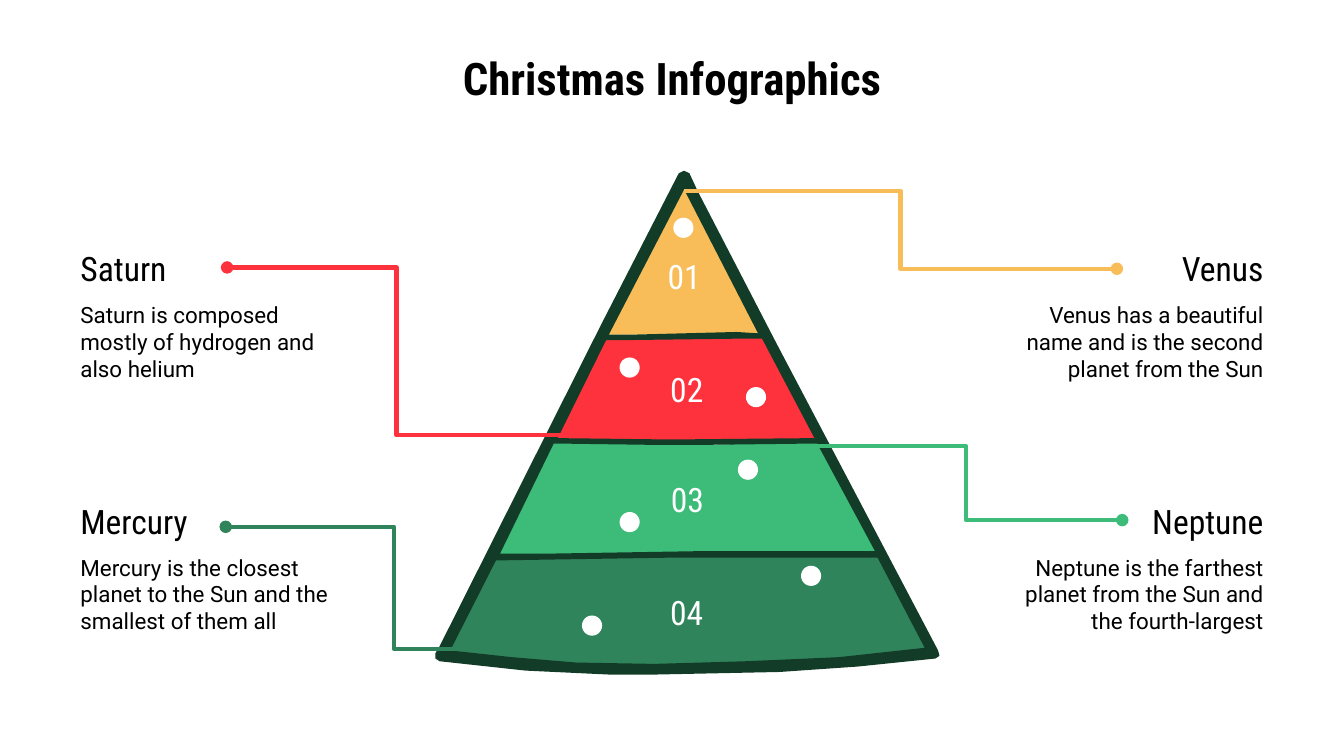
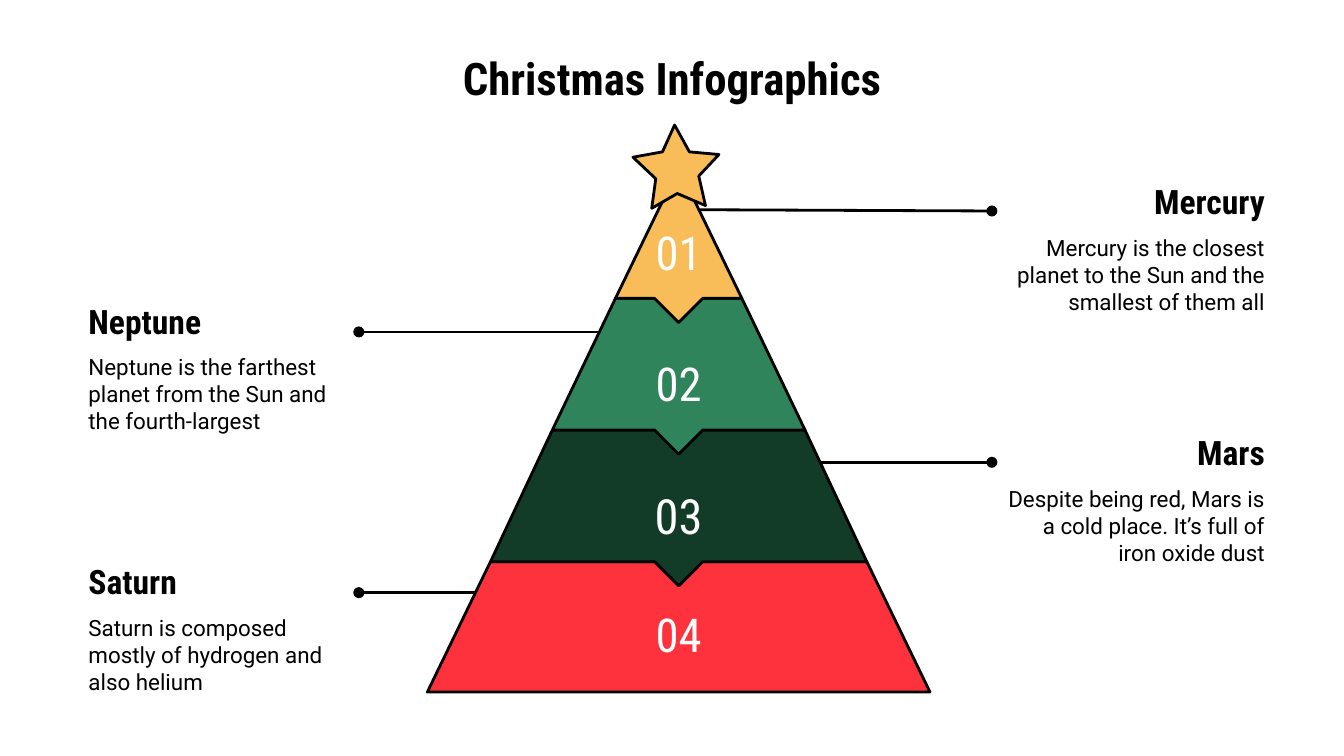
"""Build two Christmas tree infographic slides on a grid of 1000 columns."""
from lxml import etree
from pptx import Presentation, util as u
from pptx.dml.color import RGBColor
from pptx.enum import shapes, text
from pptx.oxml import ns

BLACK = RGBColor(0x00, 0x00, 0x00)
WHITE = RGBColor(0xFF, 0xFF, 0xFF)
GOLD = RGBColor(0xF8, 0xBD, 0x59)
RED = RGBColor(0xFE, 0x32, 0x3D)
LIGHT_GREEN = RGBColor(0x3D, 0xBB, 0x78)
GREEN = RGBColor(0x2F, 0x84, 0x5C)
DARK_GREEN = RGBColor(0x13, 0x3C, 0x28)

HEADING_FONT, BODY_FONT = "Roboto Condensed", "Roboto"
LEFT, CENTER, RIGHT = text.PP_ALIGN.LEFT, text.PP_ALIGN.CENTER, text.PP_ALIGN.RIGHT
TOP, MIDDLE, BOTTOM = text.MSO_ANCHOR.TOP, text.MSO_ANCHOR.MIDDLE, text.MSO_ANCHOR.BOTTOM

deck = Presentation()
deck.slide_width, deck.slide_height = u.Inches(10), u.Inches(5.625)
CELL = deck.slide_width // 1000


def write(shape, words, size, font=HEADING_FONT, color=BLACK, bold=False,
          align=CENTER, anchor=MIDDLE, top_inset=10):
    frame = shape.text_frame
    layout = {"word_wrap": True, "vertical_anchor": anchor, "margin_top": top_inset * CELL,
              "margin_left": 10 * CELL, "margin_right": 10 * CELL, "margin_bottom": 10 * CELL}
    for name, value in layout.items():
        setattr(frame, name, value)
    para = frame.paragraphs[0]
    para.alignment = align
    span = para.add_run()
    span.text = words
    for name, value in {"size": u.Pt(size), "name": font, "bold": bold}.items():
        setattr(span.font, name, value)
    span.font.color.rgb = color


def draw_outline(page, contours, fill, line=None):
    first, *holes = contours
    builder = page.shapes.build_freeform(*first[0], scale=CELL)
    builder.add_line_segments(first[1:], close=True)
    for hole in holes:
        builder.move_to(*hole[0])
        builder.add_line_segments(hole[1:], close=True)
    shape = builder.convert_to_shape()
    shape.shadow.inherit = False
    shape.fill.solid()
    shape.fill.fore_color.rgb = fill
    if line is None:
        shape.line.fill.background()
    else:
        shape.line.color.rgb = line
        shape.line.width = u.Pt(1.5)
    return shape


FACTS = {
    "Venus": "Venus has a beautiful name and is the second planet from the Sun",
    "Neptune": "Neptune is the farthest planet from the Sun and the fourth-largest",
    "Mercury": "Mercury is the closest planet to the Sun and the smallest of them all",
    "Saturn": "Saturn is composed mostly of hydrogen and also helium",
    "Mars": "Despite being red, Mars is a cold place. It’s full of iron oxide dust",
}
curved_captions = [("Venus", 737, 175, RIGHT), ("Neptune", 737, 363, RIGHT),
                   ("Mercury", 50, 363, LEFT), ("Saturn", 50, 175, LEFT)]
stepped_captions = [("Mercury", 738, 125, RIGHT), ("Neptune", 56, 214, LEFT),
                    ("Mars", 738, 312, RIGHT), ("Saturn", 56, 408, LEFT)]

curved_page, stepped_page = [deck.slides.add_slide(deck.slide_layouts[6]) for _ in range(2)]
for page, captions, bold in [(curved_page, curved_captions, False),
                             (stepped_page, stepped_captions, True)]:
    title = page.shapes.add_textbox(50 * CELL, 45 * CELL, 900 * CELL, 43 * CELL)
    write(title, "Christmas Infographics", 24, bold=True, anchor=BOTTOM)
    for planet, left, top, align in captions:
        heading = page.shapes.add_textbox(left * CELL, top * CELL, 213 * CELL, 49 * CELL)
        write(heading, planet, 18, bold=bold, align=align)
        body = page.shapes.add_textbox(left * CELL, (top + 39) * CELL, 213 * CELL, 61 * CELL)
        write(body, FACTS[planet], 12, BODY_FONT, align=align, anchor=TOP)

curved_tiers = [
    (GOLD, 40, [(509, 132), (570, 249), (448, 249), (478, 190)]),
    (RED, 10, [(571, 251), (612, 327), (572, 328), (546, 327), (512, 328), (466, 328),
               (410, 326), (447, 251), (481, 252)]),
    (LIGHT_GREEN, 10, [(408, 329), (466, 330), (524, 331), (572, 330), (613, 329), (656, 411),
                       (630, 412), (593, 410), (512, 412), (439, 413), (367, 413)]),
    (GREEN, 10, [(365, 415), (402, 416), (478, 415), (571, 413), (600, 413), (657, 414),
                 (694, 486), (618, 493), (545, 497), (482, 498), (404, 496), (328, 488)]),
]
for number, (color, inset, points) in enumerate(curved_tiers, 1):
    tier = draw_outline(curved_page, [points], color)
    write(tier, f"{number:02}", 18, color=WHITE, top_inset=inset)

tree_frame = [
    [(509, 127), (505, 129), (447, 242), (327, 481), (324, 486), (324, 490), (327, 492),
     (391, 499), (455, 502), (483, 502), (580, 500), (638, 496), (696, 490), (699, 488),
     (698, 484), (578, 256), (519, 142), (513, 129)],
    [(509, 141), (564, 248), (548, 247), (471, 249), (453, 249)],
    [(548, 252), (567, 252), (606, 326), (499, 327), (415, 326), (451, 253), (471, 253)],
    [(608, 330), (651, 410), (526, 410), (404, 412), (372, 412), (412, 330), (484, 331),
     (526, 331)],
    [(595, 415), (653, 415), (688, 482), (624, 489), (555, 492), (487, 494), (429, 493),
     (381, 489), (335, 484), (369, 417), (495, 415)],
]
draw_outline(curved_page, tree_frame, DARK_GREEN)

for left, top in [(596, 421), (433, 458), (461, 381), (549, 342), (461, 266), (555, 288),
                  (501, 162)]:
    bauble = curved_page.shapes.add_shape(shapes.MSO_SHAPE.OVAL, left * CELL, top * CELL,
                                          15 * CELL, 15 * CELL)
    bauble.shadow.inherit = False
    bauble.fill.solid()
    bauble.fill.fore_color.rgb = WHITE
    bauble.line.fill.background()

ELBOW, STRAIGHT = shapes.MSO_CONNECTOR.ELBOW, shapes.MSO_CONNECTOR.STRAIGHT
leaders = [
    (curved_page, ELBOW, (603, 332, 835, 387), LIGHT_GREEN, 50),
    (curved_page, ELBOW, (509, 142, 831, 200), GOLD, 50),
    (curved_page, ELBOW, (347, 483, 168, 392), GREEN, 30),
    (curved_page, ELBOW, (421, 324, 169, 199), RED, 50),
    (stepped_page, STRAIGHT, (508, 441, 267, 441), BLACK, None),
    (stepped_page, STRAIGHT, (506, 344, 738, 344), BLACK, None),
    (stepped_page, STRAIGHT, (484, 247, 267, 247), BLACK, None),
    (stepped_page, STRAIGHT, (504, 156, 738, 157), BLACK, None),
]
for page, kind, ends, color, bend in leaders:
    leader = page.shapes.add_connector(kind, *[end * CELL for end in ends])
    leader.line.color.rgb = color
    leader.line.width = u.Pt(1.5 if bend is None else 2.25)
    properties = leader._element.spPr
    etree.SubElement(properties.find(ns.qn("a:ln")), ns.qn("a:tailEnd"), type="oval")
    etree.SubElement(properties, ns.qn("a:effectLst"))
    if bend is not None:
        guides = properties.find(ns.qn("a:prstGeom")).find(ns.qn("a:avLst"))
        etree.SubElement(guides, ns.qn("a:gd"), name="adj1", fmla=f"val {bend * 1000}")

AXIS, APEX, TIER_HEIGHT, TIER_SPREAD, NOTCH = 505, 125, 97.5, 46.75, 18
stepped_tiers = [(GOLD, 25), (GREEN, 25), (DARK_GREEN, 26), (RED, 25)]
for index, (color, size) in reversed(list(enumerate(stepped_tiers))):
    top, bottom = [round(APEX + TIER_HEIGHT * row) for row in (index, index + 1)]
    upper, lower = [round(TIER_SPREAD * row) for row in (index, index + 1)]
    points = [(AXIS - upper, top), (AXIS - lower, bottom)]
    if index < len(stepped_tiers) - 1:
        points += [(AXIS - NOTCH, bottom), (AXIS, bottom + NOTCH), (AXIS + NOTCH, bottom)]
    points += [(AXIS + lower, bottom), (AXIS + upper, top)]
    tier = draw_outline(stepped_page, [points], color, BLACK)
    write(tier, f"{index + 1:02}", size, color=WHITE, top_inset=20)

star = [(535, 115), (513, 113), (502, 93), (493, 113), (471, 117), (488, 133), (485, 155),
        (504, 144), (525, 153), (520, 131)]
draw_outline(stepped_page, [star], GOLD, BLACK)

deck.save("out.pptx")
